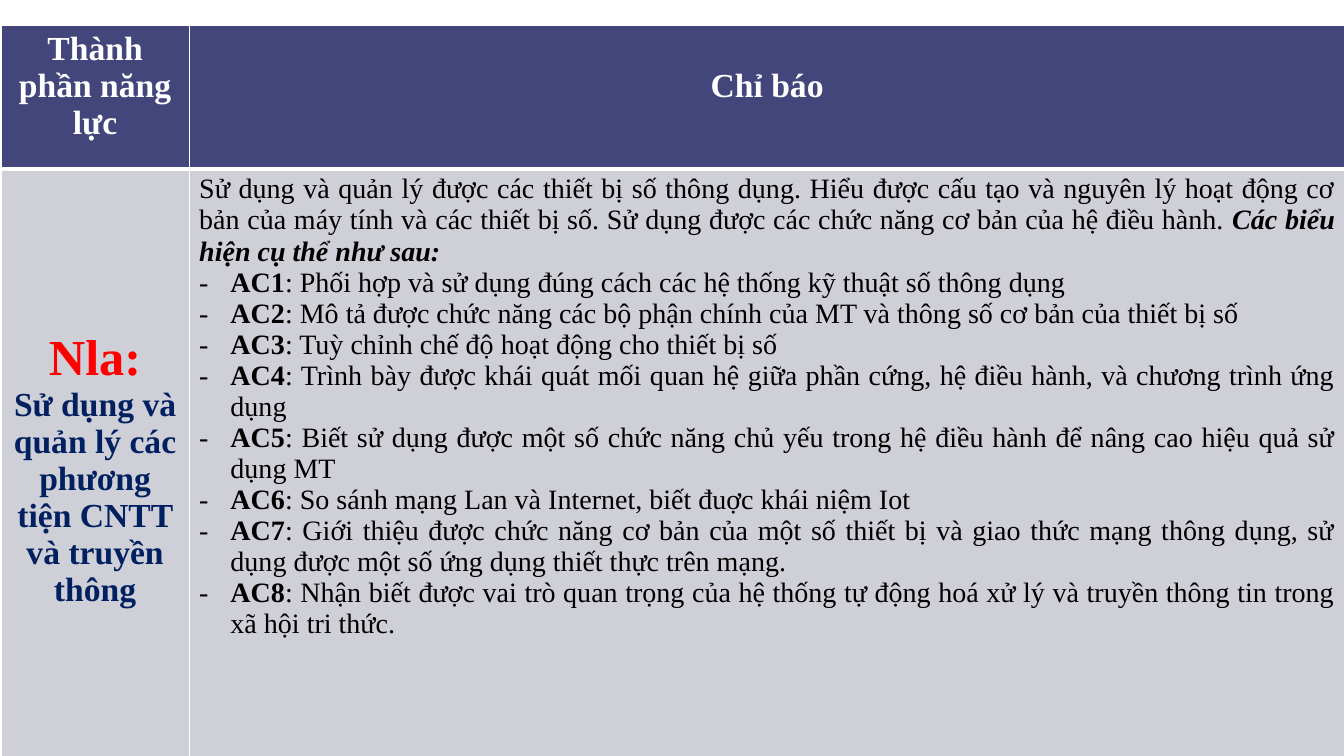
from dataclasses import dataclass

from lxml.etree import SubElement
from pptx import Presentation
from pptx.dml.color import RGBColor as Rgb
from pptx.enum.text import MSO_ANCHOR as Anchor, PP_ALIGN as Align
from pptx.oxml.ns import qn
from pptx.util import Inches, Pt


@dataclass(frozen=True)
class Theme:
    """Holds the font, colours and type sizes."""
    font: str = "Times New Roman"
    white: str = "FFFFFF"
    black: str = "000000"
    head: str = "43467B"
    body: str = "CFCFD7"
    red: str = "FF0000"
    navy: str = "002060"
    big: int = 36
    mid: int = 24
    small: int = 20


class Deck:
    """Draws on one slide; lengths are shares of its size."""

    def __init__(self, theme):
        """Opens a wide deck with one blank slide."""
        self.theme = theme
        self.prs = Presentation()
        self.prs.slide_width = Inches(13.33)
        self.prs.slide_height = Inches(7.5)
        self.slide = self.prs.slides.add_slide(self.prs.slide_layouts[6])

    def wide(self, share):
        """Gives a share of the slide's width."""
        return int(self.prs.slide_width * share)

    def high(self, share):
        """Gives a share of the slide's height."""
        return int(self.prs.slide_height * share)

    def table(self, left, top, cols, rows):
        """Adds a table with the given column and row shares."""
        grid = self.slide.shapes.add_table(
            len(rows), len(cols), self.wide(left), self.high(top),
            self.wide(sum(cols)), self.high(sum(rows))).table
        for col, share in zip(grid.columns, cols):
            col.width = self.wide(share)
        for row, share in zip(grid.rows, rows):
            row.height = self.high(share)
        return grid

    def cell(self, cell, fill, top=1, base=1):
        """Sets a cell's borders and fill and returns its text frame."""
        props = cell._tc.get_or_add_tcPr()
        for side, size in zip("LRTB", (1, 1, top, base)):
            line = SubElement(props, qn(f"a:ln{side}"), w=str(Pt(size)))
            paint = SubElement(line, qn("a:solidFill"))
            SubElement(paint, qn("a:srgbClr"), val=self.theme.white)
        cell.fill.solid()
        cell.fill.fore_color.rgb = Rgb.from_string(fill)
        return cell.text_frame

    def para(self, frame, parts, size, color, align=Align.CENTER, mark=None):
        """Adds a paragraph of (text, bold, italic) parts."""
        para = frame.paragraphs[0]
        if para.runs:
            para = frame.add_paragraph()
        para.alignment = align
        for text, bold, slant in parts:
            run = para.add_run()
            run.text = text
            font = run.font
            font.name, font.size = self.theme.font, Pt(size)
            font.bold, font.italic = bold, slant
            font.color.rgb = Rgb.from_string(color)
        if mark:
            props = para._p.get_or_add_pPr()
            props.set("marL", str(Inches(0.31)))
            props.set("indent", str(-Inches(0.31)))
            SubElement(props, qn("a:buFont"), typeface=self.theme.font)
            SubElement(props, qn("a:buChar"), char=mark)


HEADS = ("Thành phần năng lực", "Chỉ báo")
INTRO = (
    ("Sử dụng và quản lý được các thiết bị số thông dụng. Hiểu được cấu tạo "
     "và nguyên lý hoạt động cơ bản của máy tính và các thiết bị số. Sử dụng "
     "được các chức năng cơ bản của hệ điều hành. ", False, False),
    ("Các biểu hiện cụ thể như sau:", True, True),
)
SIGNS = (
    "Phối hợp và sử dụng đúng cách các hệ thống kỹ thuật số thông dụng",
    "Mô tả được chức năng các bộ phận chính của MT và thông số cơ bản của "
    "thiết bị số",
    "Tuỳ chỉnh chế độ hoạt động cho thiết bị số",
    "Trình bày được khái quát mối quan hệ giữa phần cứng, hệ điều hành, và "
    "chương trình ứng dụng",
    "Biết sử dụng được một số chức năng chủ yếu trong hệ điều hành để nâng "
    "cao hiệu quả sử dụng MT",
    "So sánh mạng Lan và Internet, biết đuợc khái niệm Iot",
    "Giới thiệu được chức năng cơ bản của một số thiết bị và giao thức mạng "
    "thông dụng, sử dụng được một số ứng dụng thiết thực trên mạng.",
    "Nhận biết được vai trò quan trọng của hệ thống tự động hoá xử lý và "
    "truyền thông tin trong xã hội tri thức.",
)


def main():
    """Builds and saves the slide."""
    look = Theme()
    deck = Deck(look)
    grid = deck.table(0.01 / 13.33, 0.25 / 7.5, (0.14, 0.86), (0.19, 0.796))

    for col, text in enumerate(HEADS):
        frame = deck.cell(grid.cell(0, col), look.head, base=3)
        deck.para(frame, [(text, True, False)], look.mid, look.white)
    grid.cell(0, 1).margin_top = deck.high(0.056)

    skill = grid.cell(1, 0)
    skill.vertical_anchor = Anchor.MIDDLE
    frame = deck.cell(skill, look.body, top=3)
    deck.para(frame, [("Nla:", True, False)], look.big, look.red)
    deck.para(frame, [("Sử dụng và quản lý các phương tiện CNTT và truyền thông",
                       True, False)], look.mid, look.navy)

    frame = deck.cell(grid.cell(1, 1), look.body, top=3)
    deck.para(frame, INTRO, look.small, look.black, Align.JUSTIFY)
    for num, text in enumerate(SIGNS, 1):
        parts = [(f"AC{num}", True, False), (f": {text}", False, False)]
        deck.para(frame, parts, look.small, look.black, Align.JUSTIFY, "-")

    deck.prs.save("out.pptx")


if __name__ == "__main__":
    main()
